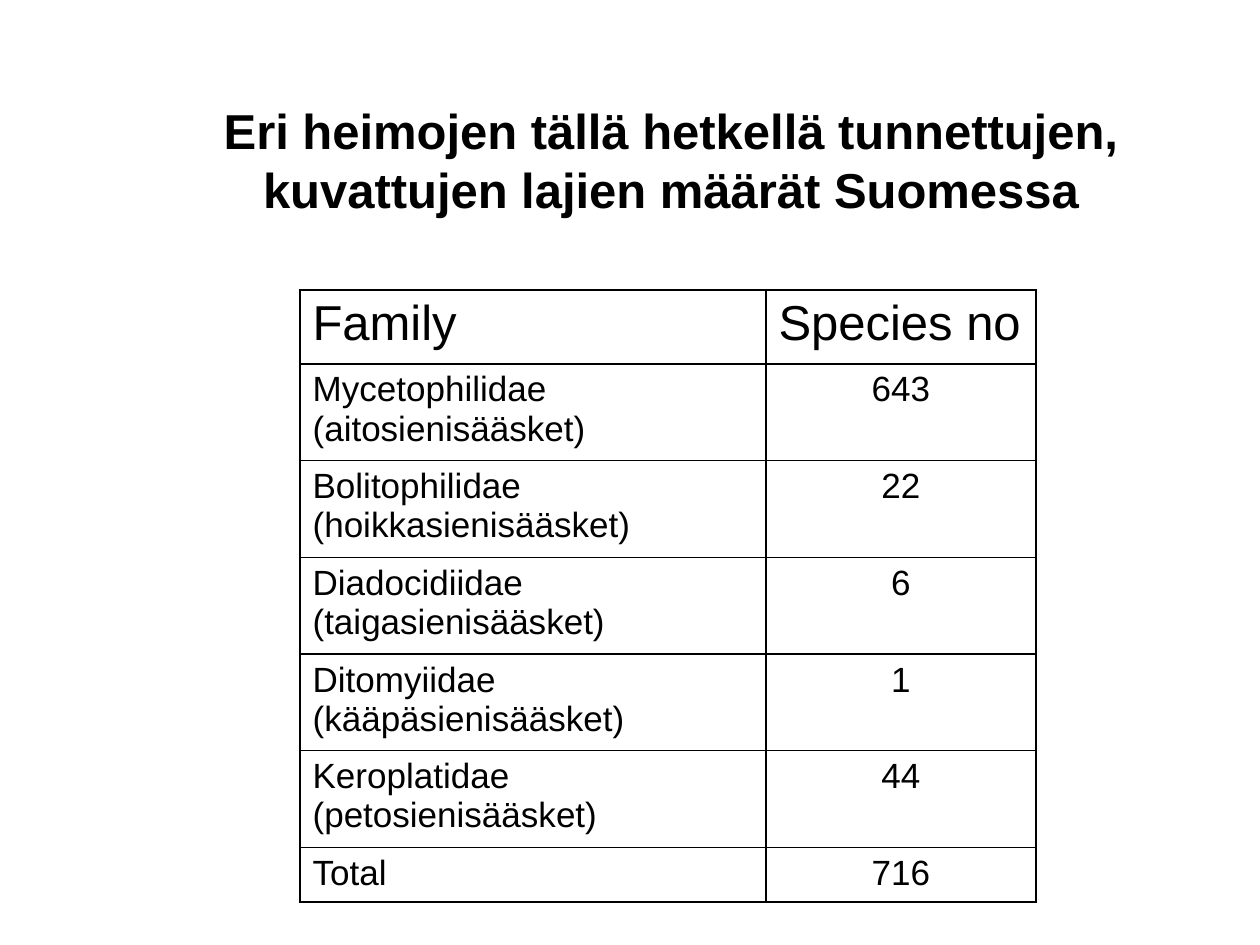
from dataclasses import dataclass

from lxml import etree
from pptx import Presentation
from pptx import util as u
from pptx.dml.color import RGBColor
from pptx.enum import text
from pptx.oxml.ns import qn

EMU_PER_PX = 914400 // 126
COLORS = {"ink": "000000"}
FONT = "Arial"
COLUMN_WIDTHS = (466, 270)
HEADER_HEIGHT, FAMILY_HEIGHT, TOTAL_HEIGHT = 74, 91, 51


@dataclass
class Row:
    family: str
    species: str
    height: int = FAMILY_HEIGHT
    size: int = 20
    number_align: text.PP_ALIGN = text.PP_ALIGN.CENTER


ROWS = [
    Row("Family", "Species no", HEADER_HEIGHT, 28, text.PP_ALIGN.LEFT),
    Row("Mycetophilidae (aitosienisääsket)", "643"),
    Row("Bolitophilidae (hoikkasienisääsket)", "22"),
    Row("Diadocidiidae (taigasienisääsket)", "6"),
    Row("Ditomyiidae (kääpäsienisääsket)", "1"),
    Row("Keroplatidae (petosienisääsket)", "44"),
    Row("Total", "716", TOTAL_HEIGHT),
]


def px(length: int) -> int:
    return u.Emu(length * EMU_PER_PX)


def write(frame, content: str, size: int, align, bold: bool = False) -> None:
    frame.text = content
    paragraph = frame.paragraphs[0]
    paragraph.alignment = align
    for run in paragraph.runs:
        run.font.name = FONT
        run.font.size = u.Pt(size)
        run.font.bold = bold
        run.font.color.rgb = RGBColor.from_string(COLORS["ink"])


def add_borders(cell) -> None:
    properties = cell._tc.get_or_add_tcPr()
    for index, side in enumerate(("lnL", "lnR", "lnT", "lnB")):
        line = etree.Element(qn(f"a:{side}"), w=str(u.Pt(1)))
        fill = etree.SubElement(line, qn("a:solidFill"))
        etree.SubElement(fill, qn("a:srgbClr"), val=COLORS["ink"])
        properties.insert(index, line)


def add_title(slide, content: str) -> None:
    box = slide.shapes.add_textbox(px(135), px(86), px(1072), px(147))
    box.text_frame.word_wrap = True
    box.text_frame.vertical_anchor = text.MSO_ANCHOR.MIDDLE
    write(box.text_frame, content, 28, text.PP_ALIGN.CENTER, bold=True)


def add_species_table(slide, rows: list[Row]) -> None:
    height = sum(row.height for row in rows)
    table = slide.shapes.add_table(
        len(rows), len(COLUMN_WIDTHS), px(300), px(290),
        px(sum(COLUMN_WIDTHS)), px(height)).table
    table.first_row = table.horz_banding = False
    for column, width in zip(table.columns, COLUMN_WIDTHS):
        column.width = px(width)
    for table_row, row in zip(table.rows, rows):
        table_row.height = px(row.height)
        family, species = table_row.cells
        write(family.text_frame, row.family, row.size, text.PP_ALIGN.LEFT)
        write(species.text_frame, row.species, row.size, row.number_align)
        for cell in (family, species):
            cell.fill.background()
            add_borders(cell)


def main() -> None:
    presentation = Presentation()
    presentation.slide_width = u.Inches(10)
    presentation.slide_height = u.Inches(7.5)
    slide = presentation.slides.add_slide(presentation.slide_layouts[6])

    # Heading
    add_title(slide, "Eri heimojen tällä hetkellä tunnettujen, "
                     "kuvattujen lajien määrät Suomessa")
    # Species count per family
    add_species_table(slide, ROWS)

    presentation.save("out.pptx")


if __name__ == "__main__":
    main()
